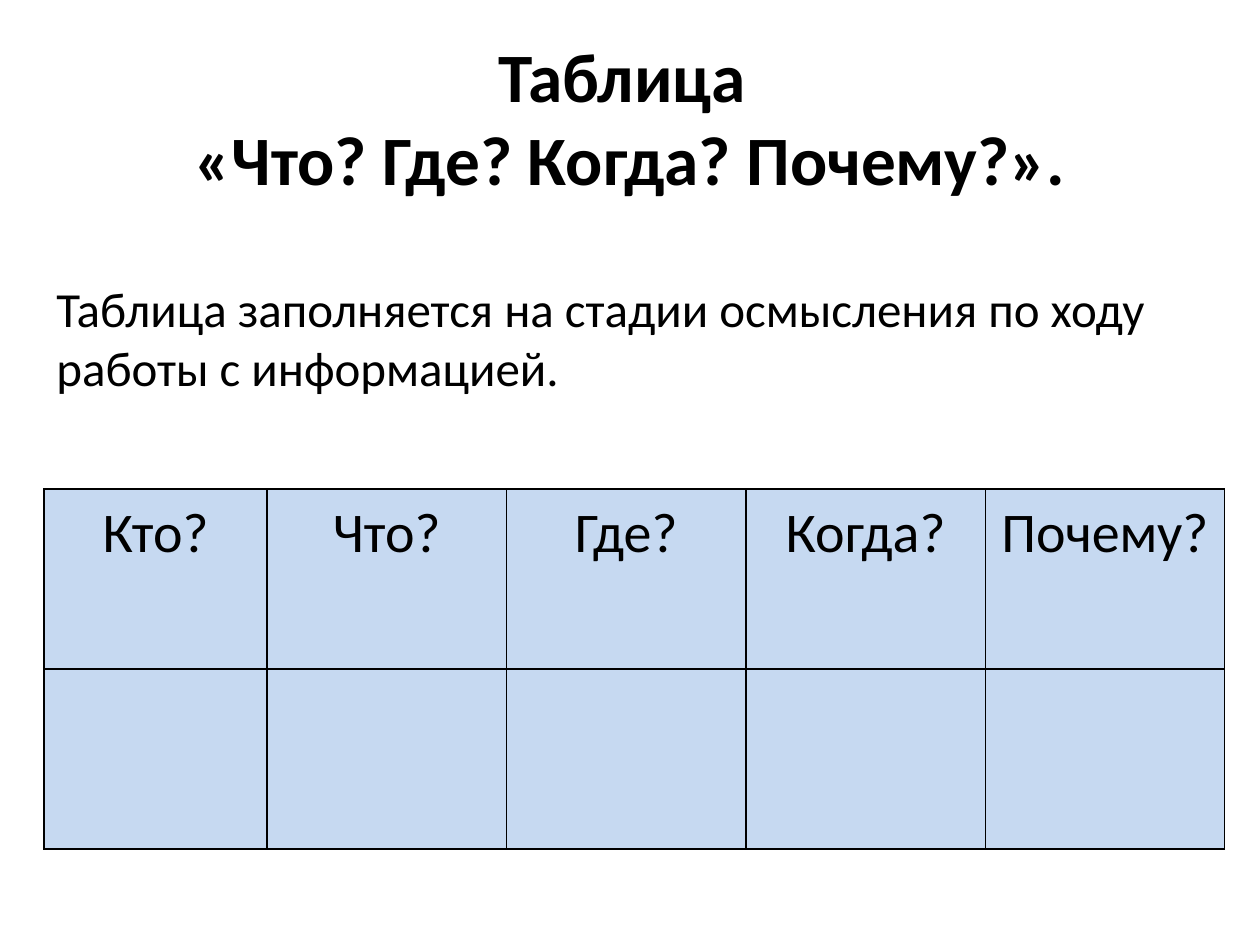
"""Build a slide with a title, an explanation and a question table."""
from dataclasses import dataclass

from lxml import etree
from pptx import Presentation
from pptx import util as u
from pptx.dml.color import RGBColor
from pptx.enum import text
from pptx.oxml import ns

BLACK = RGBColor(0x00, 0x00, 0x00)
PALE_BLUE = RGBColor(0xC6, 0xD9, 0xF1)
FONT = "Calibri"
QUESTIONS = ["Кто?", "Что?", "Где?", "Когда?", "Почему?"]
COLUMN_WIDTHS = [1.77] + [1.9] * 4
ROW_HEIGHTS = [1.43] * 2


@dataclass
class TextBlock:
    words: str
    left: float
    top: float
    width: float
    height: float
    size: float
    align: text.PP_ALIGN
    bold: bool = False


BLOCKS = [
    TextBlock("Таблица \v«Что? Где? Когда? Почему?».",
              0.5, 0.3, 9, 1.25, 39.6, text.PP_ALIGN.CENTER, True),
    TextBlock("Таблица заполняется на стадии осмысления по ходу работы с информацией.",
              0.35, 2.16, 9.37, 1.04, 28, text.PP_ALIGN.LEFT),
]


def style_paragraph(para, size: float, align: text.PP_ALIGN, bold: bool = False) -> None:
    para.alignment = align
    para.font.name = FONT
    para.font.size = u.Pt(size)
    para.font.bold = bold
    para.font.color.rgb = BLACK


def add_block(page, block: TextBlock) -> None:
    box = page.shapes.add_textbox(u.Inches(block.left), u.Inches(block.top),
                                  u.Inches(block.width), u.Inches(block.height))
    frame = box.text_frame
    frame.word_wrap = True
    frame.vertical_anchor = text.MSO_ANCHOR.MIDDLE
    frame.text = block.words
    style_paragraph(frame.paragraphs[0], block.size, block.align, block.bold)


def add_borders(cell) -> None:
    properties = cell._tc.get_or_add_tcPr()
    for position, side in enumerate(("lnL", "lnR", "lnT", "lnB")):
        line = etree.Element(ns.qn(f"a:{side}"), w=str(u.Pt(1)))
        fill = etree.SubElement(line, ns.qn("a:solidFill"))
        etree.SubElement(fill, ns.qn("a:srgbClr"), val=str(BLACK))
        properties.insert(position, line)


def add_question_table(page) -> None:
    table = page.shapes.add_table(
        len(ROW_HEIGHTS), len(QUESTIONS), u.Inches(0.35), u.Inches(3.88),
        u.Inches(sum(COLUMN_WIDTHS)), u.Inches(sum(ROW_HEIGHTS))).table
    table.first_row = table.horz_banding = False
    for column, width in zip(table.columns, COLUMN_WIDTHS):
        column.width = u.Inches(width)
    for row, height in zip(table.rows, ROW_HEIGHTS):
        row.height = u.Inches(height)
    for cell in table.iter_cells():
        cell.fill.solid()
        cell.fill.fore_color.rgb = PALE_BLUE
        cell.margin_left = cell.margin_right = u.Inches(0.07)
        cell.margin_top = cell.margin_bottom = u.Inches(0)
        add_borders(cell)
    for cell, question in zip(table.rows[0].cells, QUESTIONS):
        cell.text = question
        para = cell.text_frame.paragraphs[0]
        para.line_spacing = 1.15
        style_paragraph(para, 32, text.PP_ALIGN.CENTER)


def main() -> None:
    deck = Presentation()
    deck.slide_width, deck.slide_height = u.Inches(10), u.Inches(7.5)
    page = deck.slides.add_slide(deck.slide_layouts[6])
    for block in BLOCKS:
        add_block(page, block)
    add_question_table(page)
    deck.save("out.pptx")


if __name__ == "__main__":
    main()
